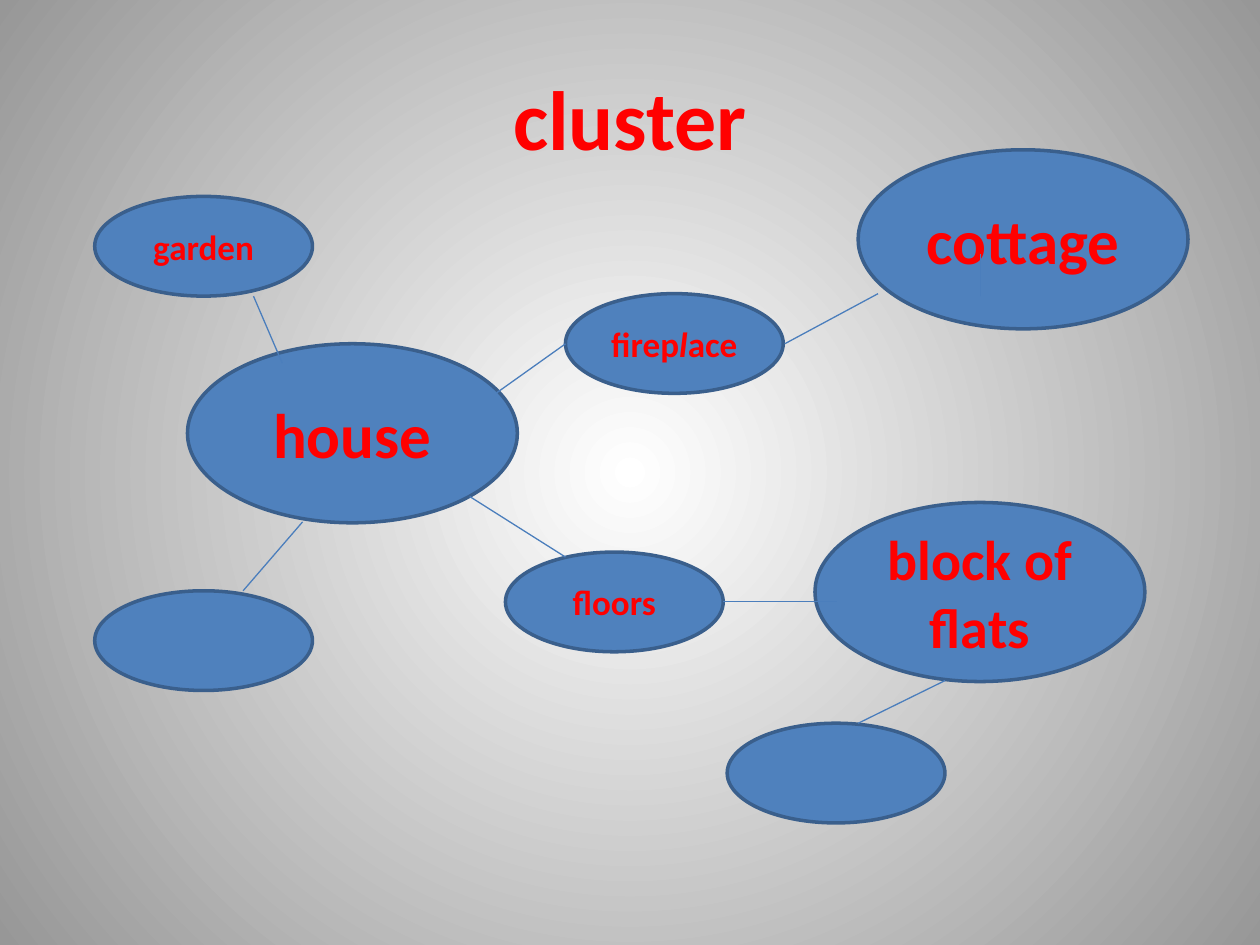
from lxml import etree
from pptx import Presentation
from pptx.dml.color import RGBColor as Rgb
from pptx.enum.shapes import MSO_CONNECTOR as Link, MSO_SHAPE as Shape
from pptx.enum.text import MSO_ANCHOR as Anchor, PP_ALIGN as Align
from pptx.oxml.ns import qn
from pptx.util import Cm, Pt

COLORS = {
    "text": "FF0000",
    "fill": "4F81BD",
    "edge": "3A5F8C",
    "link": "4B7EBC",
    "inner": "FFFFFF",
    "outer": "979797",
}
BIG = (6.65, 3.61)
SMALL = (4.39, 2.01)

# left, top, size, text runs, font size; every second run is italic
NODES = [
    (16.43, 10.13, BIG, ["block of flats"], 32),
    (17.3, 3.02, BIG, ["cottage"], 36),
    (3.78, 6.93, BIG, ["house"], 36),
    (10.19, 11.13, SMALL, ["floors"], 20),
    (1.91, 11.91, SMALL, [], 20),
    (1.91, 3.96, SMALL, ["garden"], 20),
    (11.4, 5.92, SMALL, ["firep", "l", "ace"], 20),
    (14.66, 14.58, SMALL, [], 20),
]
# start x, start y, end x, end y
LINKS = [
    (5.11, 5.97, 5.69, 7.32),
    (4.9, 11.91, 6.1, 10.52),
    (10.01, 7.92, 11.4, 6.93),
    (19.76, 5.97, 19.76, 5.13),
    (15.82, 6.93, 17.7, 5.92),
    (9.47, 10.01, 11.4, 11.23),
    (14.58, 12.12, 16.87, 12.12),
    (19.05, 13.72, 17.3, 14.58),
]


def color(name):
    return Rgb.from_string(COLORS[name])


def write(shape, runs, size=20, bold=True, font="Calibri", hue="text"):
    """Centre the runs in the shape, with every second one in italics."""
    frame = shape.text_frame
    frame.word_wrap = True
    frame.vertical_anchor = Anchor.MIDDLE
    para = frame.paragraphs[0]
    para.alignment = Align.CENTER
    for i, text in enumerate(runs):
        run = para.add_run()
        run.text = text
        run.font.name = font
        run.font.size = Pt(size)
        run.font.bold = bold
        run.font.italic = i % 2 == 1
        run.font.color.rgb = color(hue)


def paint_back(slide):
    """Fill the background with a round gradient from the centre."""
    fill = slide.background.fill
    fill.gradient()
    for stop, name in zip(fill.gradient_stops, ("inner", "outer")):
        stop.color.rgb = color(name)
    grad = next(slide.element.iter(qn("a:gradFill")))
    grad.remove(grad.find(qn("a:lin")))
    ring = etree.SubElement(grad, qn("a:path"), path="circle")
    etree.SubElement(ring, qn("a:fillToRect"),
                     {side: "50000" for side in "ltrb"})


def add_title(slide, text):
    box = slide.shapes.add_textbox(Cm(1.27), Cm(0.76), Cm(22.86), Cm(3.18))
    write(box, [text], size=48)


def add_node(slide, left, top, size, runs, points):
    node = slide.shapes.add_shape(
        Shape.OVAL, Cm(left), Cm(top), *map(Cm, size))
    node.shadow.inherit = False
    node.fill.solid()
    node.fill.fore_color.rgb = color("fill")
    node.line.color.rgb = color("edge")
    node.line.width = Pt(2)
    if runs:
        write(node, runs, size=points)


def add_link(slide, *ends):
    link = slide.shapes.add_connector(Link.STRAIGHT, *map(Cm, ends))
    link.line.color.rgb = color("link")
    link.line.width = Pt(0.75)
    etree.SubElement(link.element.find(qn("p:spPr")), qn("a:effectLst"))


def main():
    deck = Presentation()
    deck.slide_width, deck.slide_height = Cm(25.4), Cm(19.05)
    slide = deck.slides.add_slide(deck.slide_layouts[6])
    paint_back(slide)
    add_title(slide, "cluster")
    for node in NODES:
        add_node(slide, *node)
    for ends in LINKS:
        add_link(slide, *ends)
    deck.save("out.pptx")


if __name__ == "__main__":
    main()
